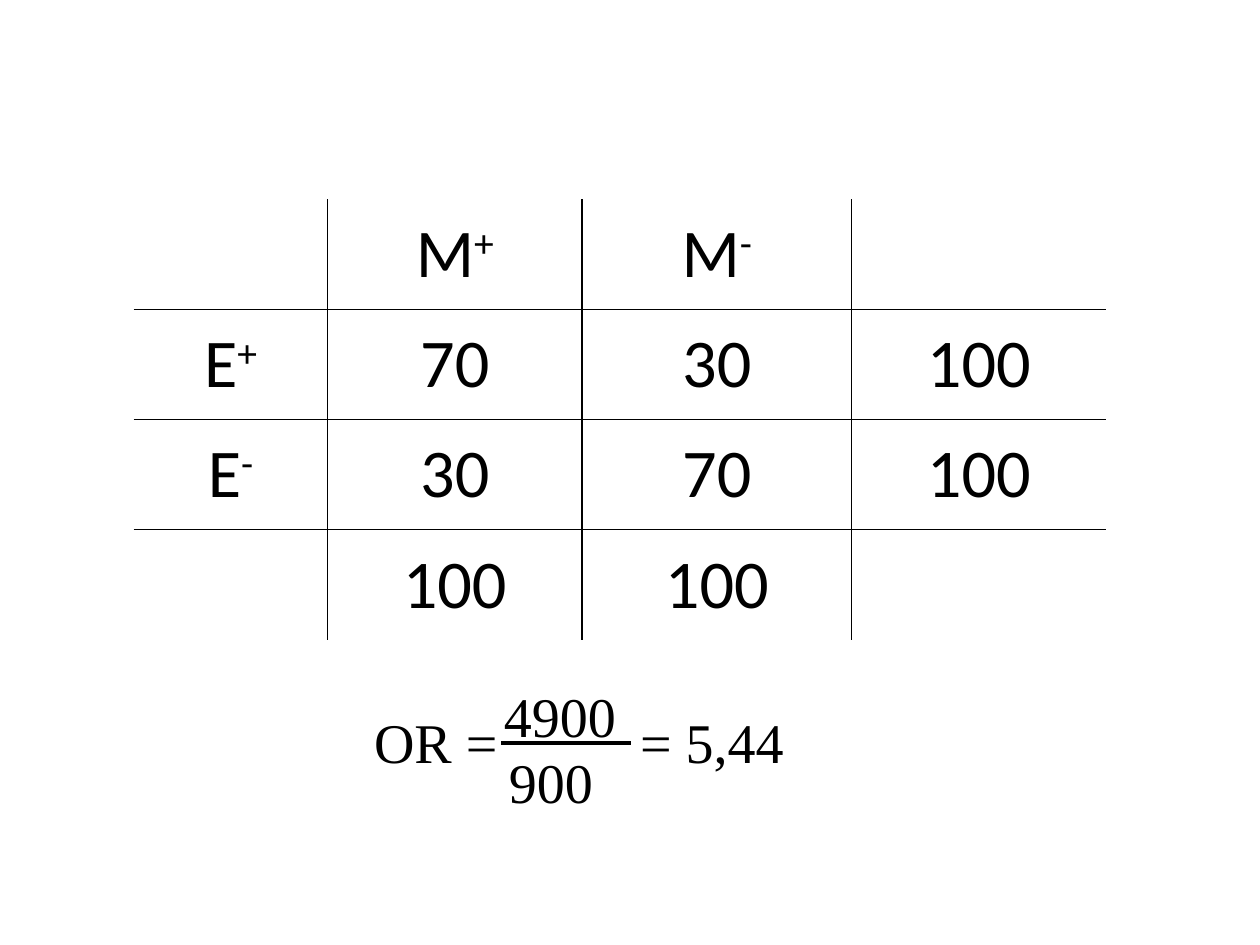
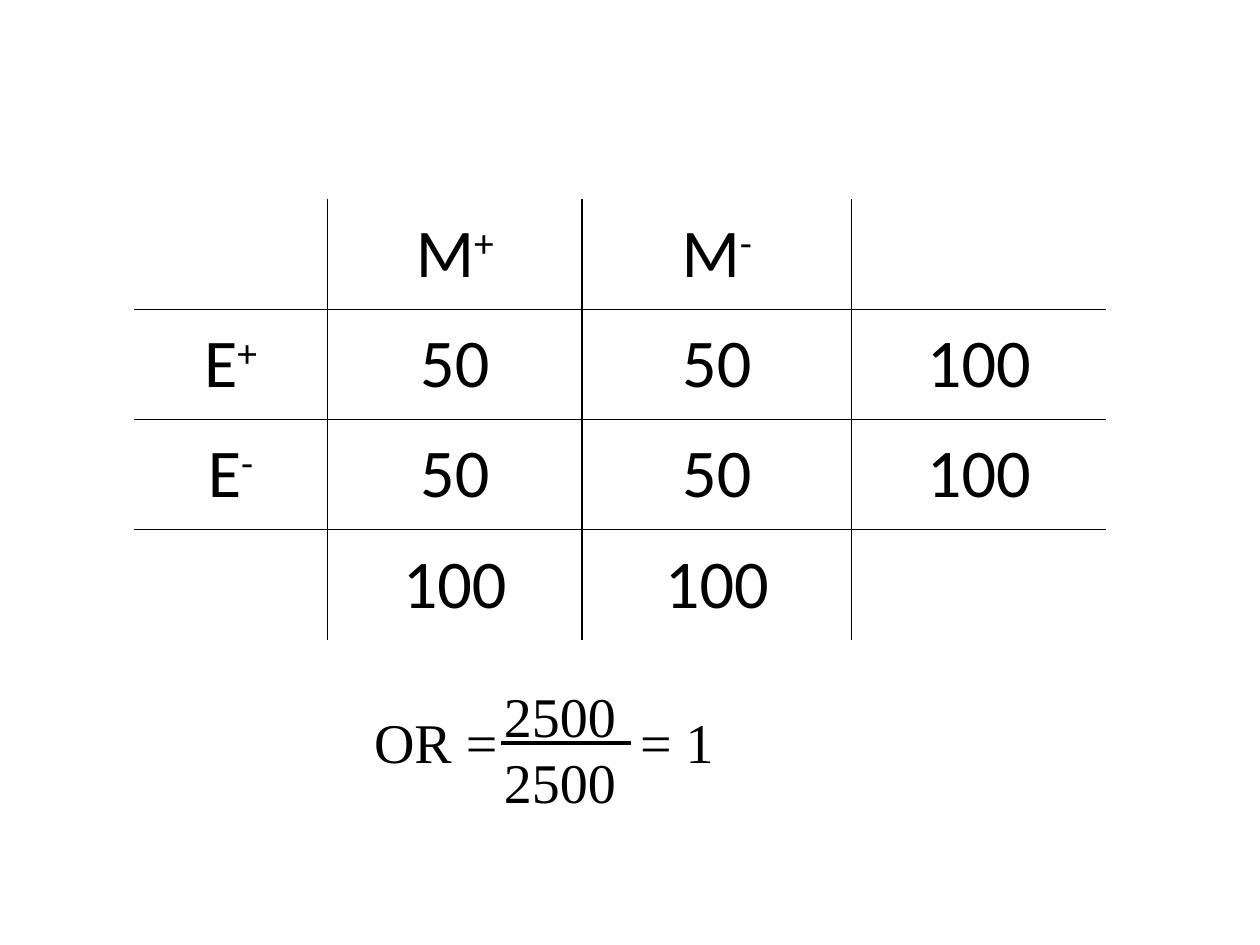
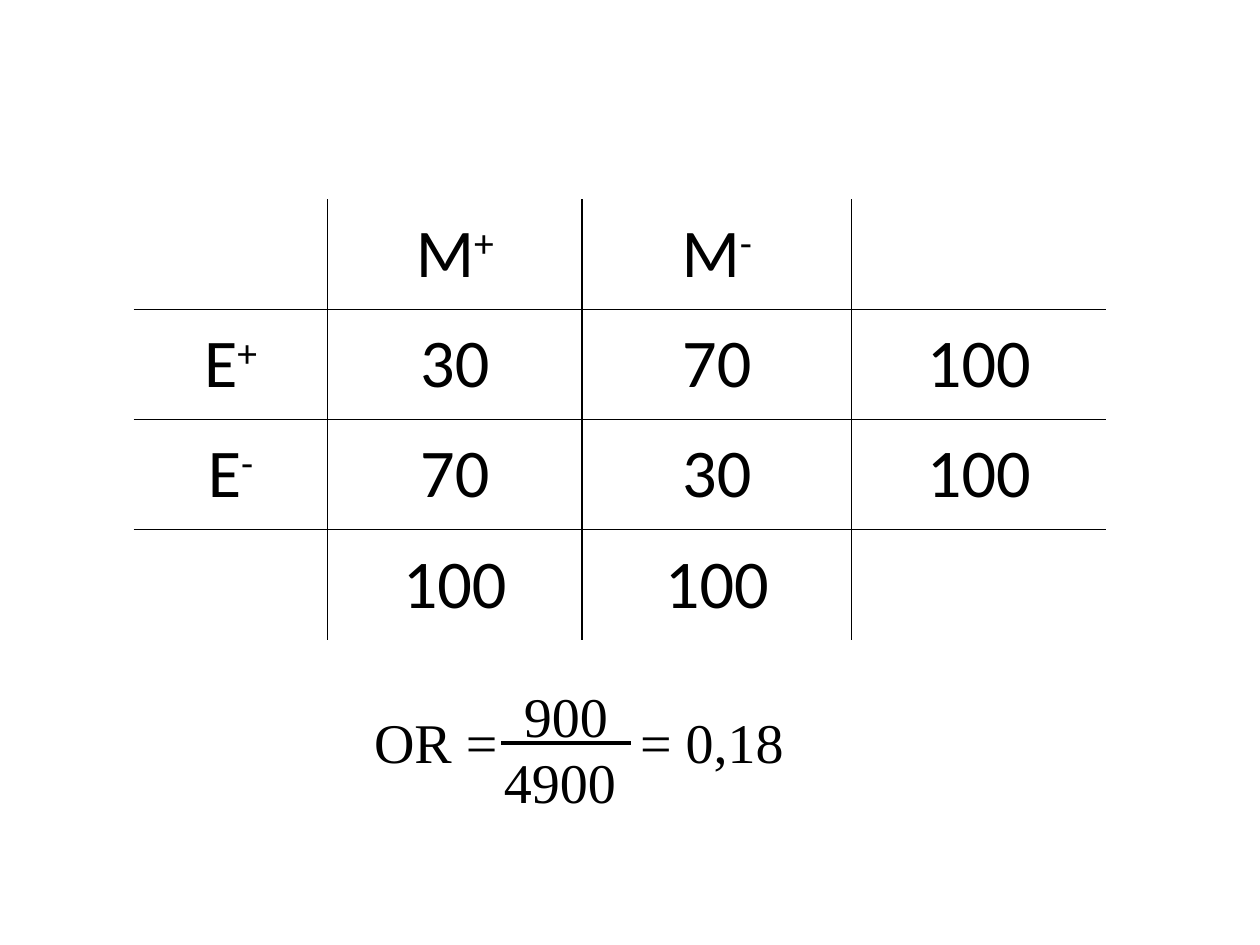
from lxml.etree import SubElement
from pptx import Presentation
from pptx.dml.color import RGBColor as Color
from pptx.enum.shapes import MSO_CONNECTOR as Connector
from pptx.enum.text import MSO_ANCHOR as Anchor, MSO_AUTO_SIZE as AutoSize, PP_ALIGN as Align
from pptx.oxml import parse_xml
from pptx.oxml.ns import nsdecls, qn
from pptx.util import Inches, Pt

COLORS = {"ink": "000000", "paper": "FFFFFF"}
TABLE_FONT, FORMULA_FONT = "Calibri", "Times New Roman"
GRID_COLUMNS, GRID_ROWS = 100, 75
COLUMN_WIDTHS = [15.4, 20.2, 21.4, 20.2]
ROW_HEIGHT = 8.75
TEXT_HEIGHT = 6.4
TAB_STOP = 20

CASES = [
    {"counts": [70, 30, 30, 70], "top": "4900", "bottom": "900", "result": "5,44",
     "top_column": 39, "bottom_column": 39.4},
    {"counts": [50, 50, 50, 50], "top": "2500", "bottom": "2500", "result": "1",
     "top_column": 39, "bottom_column": 39},
    {"counts": [30, 70, 70, 30], "top": "900", "bottom": "4900", "result": "0,18",
     "top_column": 40.6, "bottom_column": 39},
]


class SlideBuilder:
    def __init__(self, presentation):
        self.presentation = presentation
        self.slide = None

    def start_slide(self):
        self.slide = self.presentation.slides.add_slide(self.presentation.slide_layouts[6])
        background = self.slide.background.fill
        background.solid()
        background.fore_color.rgb = Color.from_string(COLORS["paper"])

    def across(self, columns):
        return round(self.presentation.slide_width * columns / GRID_COLUMNS)

    def down(self, rows):
        return round(self.presentation.slide_height * rows / GRID_ROWS)

    def style_run(self, run, font_name, size):
        run.font.name = font_name
        run.font.size = Pt(size)
        run.font.color.rgb = Color.from_string(COLORS["ink"])

    def text(self, content, column, row, width):
        box = self.slide.shapes.add_textbox(
            self.across(column), self.down(row), self.across(width), self.down(TEXT_HEIGHT))
        frame = box.text_frame
        frame.word_wrap = True
        frame.auto_size = AutoSize.SHAPE_TO_FIT_TEXT
        frame.text = content
        paragraph = frame.paragraphs[0]
        if "\t" in content:
            tabs = SubElement(paragraph._p.get_or_add_pPr(), qn("a:tabLst"))
            SubElement(tabs, qn("a:tab"), pos=str(self.across(TAB_STOP)), algn="l")
        for run in paragraph.runs:
            self.style_run(run, FORMULA_FONT, 32)

    def line(self, start, end, row):
        connector = self.slide.shapes.add_connector(
            Connector.STRAIGHT, self.across(start), self.down(row),
            self.across(end), self.down(row))
        connector.line.color.rgb = Color.from_string(COLORS["ink"])
        connector.line.width = Pt(2.25)
        SubElement(connector._element.spPr, qn("a:effectLst"))

    def borders(self, cell, visible):
        properties = cell._tc.get_or_add_tcPr()
        for index, (side, shown) in enumerate(visible.items()):
            fill = (f'<a:solidFill><a:srgbClr val="{COLORS["ink"]}"/></a:solidFill>'
                    if shown else "<a:noFill/>")
            properties.insert(index, parse_xml(
                f'<a:{side} {nsdecls("a")} w="{Pt(1)}">{fill}</a:{side}>'))

    def cell(self, cell, content):
        cell.fill.background()
        cell.vertical_anchor = Anchor.MIDDLE
        cell.margin_left = cell.margin_right = Inches(0.1)
        cell.margin_top = cell.margin_bottom = Inches(0.04)
        paragraph = cell.text_frame.paragraphs[0]
        paragraph.alignment = Align.CENTER
        is_label = content[-1:] in ("+", "-")
        for part in content if is_label else [content] if content else []:
            run = paragraph.add_run()
            run.text = part
            self.style_run(run, TABLE_FONT, 39)
            if part in ("+", "-"):
                run.font._element.set("baseline", "30000")

    def table(self, rows, column, row):
        row_count, column_count = len(rows), len(COLUMN_WIDTHS)
        table = self.slide.shapes.add_table(
            row_count, column_count, self.across(column), self.down(row),
            self.across(sum(COLUMN_WIDTHS)), self.down(ROW_HEIGHT * row_count)).table
        table.first_row = table.horz_banding = False
        for table_column, width in zip(table.columns, COLUMN_WIDTHS):
            table_column.width = self.across(width)
        for r, contents in enumerate(rows):
            table.rows[r].height = self.down(ROW_HEIGHT)
            for c, content in enumerate(contents):
                cell = table.cell(r, c)
                self.cell(cell, content)
                self.borders(cell, {"lnL": c > 0, "lnR": c < column_count - 1,
                                    "lnT": r > 0, "lnB": r < row_count - 1})

    def odds_ratio(self, case):
        self.text(f"OR = \t = {case['result']}", 28.7, 55.7, 37.8)
        self.line(39.8, 50.1, 59)
        self.text(case["top"], case["top_column"], 53.6, 14.1)
        self.text(case["bottom"], case["bottom_column"], 58.8, 13.6)


def contingency_rows(counts):
    a, b, c, d = counts
    return [
        ["", "M+", "M-", ""],
        ["E+", str(a), str(b), str(a + b)],
        ["E-", str(c), str(d), str(c + d)],
        ["", str(a + c), str(b + d), ""],
    ]


def main():
    presentation = Presentation()
    presentation.slide_width = Inches(10)
    presentation.slide_height = Inches(7.5)
    builder = SlideBuilder(presentation)
    for case in CASES:
        builder.start_slide()
        builder.table(contingency_rows(case["counts"]), 10.6, 15.8)
        builder.odds_ratio(case)
    presentation.save("out.pptx")


if __name__ == "__main__":
    main()
